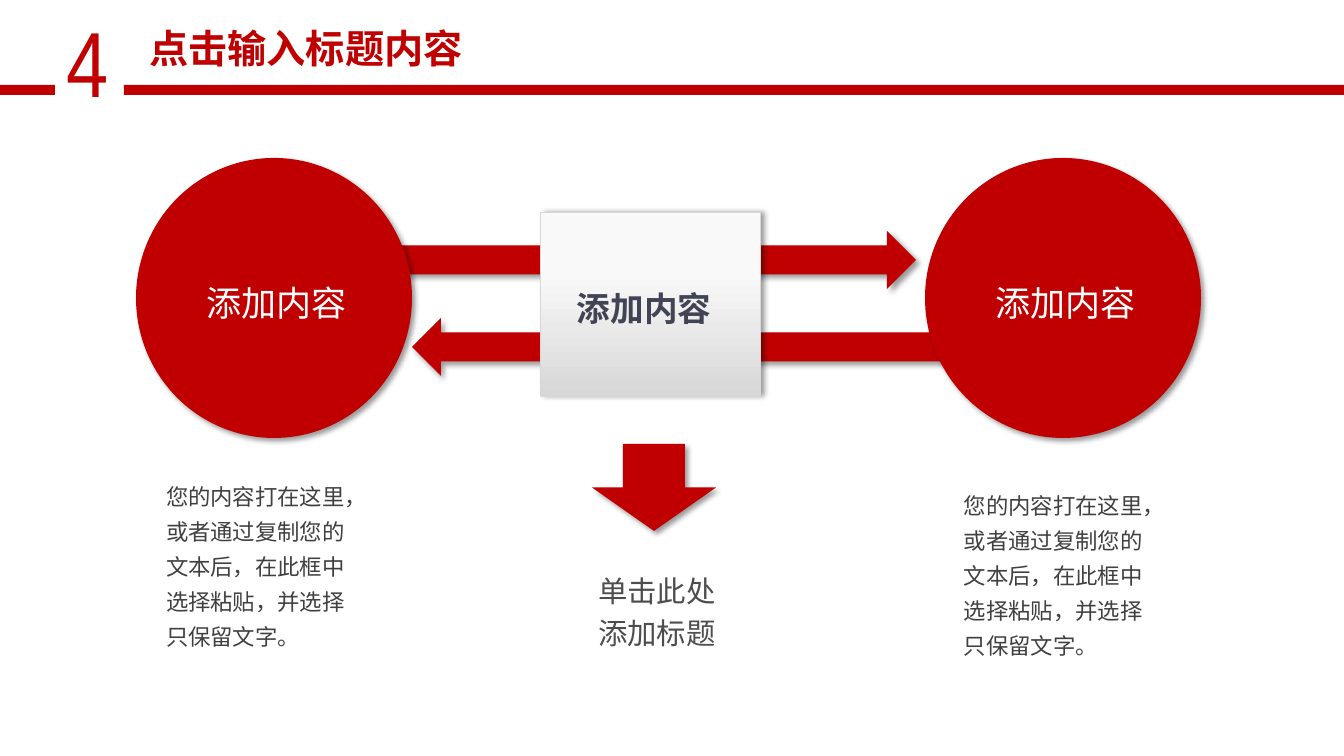
from dataclasses import dataclass

from lxml import etree
from pptx import Presentation
from pptx import util as u
from pptx.dml.color import RGBColor
from pptx.enum import shapes, text
from pptx.oxml.ns import qn

EMU_PER_PX = 914400 / 100.8


@dataclass(frozen=True)
class Theme:
    red: str = "C00000"
    white: str = "FFFFFF"
    slate: str = "414455"
    body_gray: str = "404040"
    caption_gray: str = "4D4D4D"
    panel_top: str = "F9F9F9"
    panel_bottom: str = "D7D7D7"
    shadow: str = "000000"
    cjk: str = "Noto Sans CJK SC"
    narrow: str = "Arial Narrow"
    number_size: int = 66
    title_size: int = 28
    circle_size: int = 25
    panel_size: int = 24
    caption_size: int = 21
    body_size: int = 16


def px(length):
    return u.Emu(round(length * EMU_PER_PX))


class SlideBuilder:
    def __init__(self, slide, theme):
        self.slide = slide
        self.theme = theme

    def set_text(self, frame, words, size, color, font=None, bold=False,
                 spacing=None, align=text.PP_ALIGN.LEFT, insets=(10, 5, 10, 5)):
        frame.word_wrap = True
        (frame.margin_left, frame.margin_top,
         frame.margin_right, frame.margin_bottom) = map(px, insets)
        para = frame.paragraphs[0]
        para.text = words
        para.alignment = align
        if spacing:
            para.line_spacing = spacing
        name = font or self.theme.cjk
        para.font.name = name
        para.font.size = u.Pt(size)
        para.font.bold = bold
        para.font.color.rgb = RGBColor.from_string(color)
        properties = para._p.get_or_add_pPr().get_or_add_defRPr()
        etree.SubElement(properties, qn("a:ea"), typeface=name)

    def text_box(self, place, words, size, color, **style):
        box = self.slide.shapes.add_textbox(*map(px, place))
        box.text_frame.auto_size = text.MSO_AUTO_SIZE.SHAPE_TO_FIT_TEXT
        self.set_text(box.text_frame, words, size, color, **style)

    def shape(self, kind, place, shadow_angle=None):
        shape = self.slide.shapes.add_shape(kind, *map(px, place))
        shape.shadow.inherit = False
        shape.fill.solid()
        shape.fill.fore_color.rgb = RGBColor.from_string(self.theme.red)
        shape.line.fill.background()
        if shadow_angle is not None:
            self.cast_shadow(shape, shadow_angle)
        return shape

    def cast_shadow(self, shape, angle):
        effects = shape._element.spPr.find(qn("a:effectLst"))
        shadow = etree.SubElement(
            effects, qn("a:outerShdw"), blurRad=str(u.Pt(4)), dist=str(u.Pt(3)),
            dir=str(angle * 60000), algn="tl", rotWithShape="0")
        color = etree.SubElement(shadow, qn("a:srgbClr"), val=self.theme.shadow)
        etree.SubElement(color, qn("a:alpha"), val="40000")

    def label(self, shape, words, size, color, indent, bold=False):
        shape.text_frame.vertical_anchor = text.MSO_ANCHOR.MIDDLE
        self.set_text(shape.text_frame, words, size, color, bold=bold,
                      spacing=1.2, insets=(indent, 7, 14, 7))

    def circle(self, place, words):
        circle = self.shape(shapes.MSO_SHAPE.OVAL, place, 45)
        self.label(circle, words, self.theme.circle_size, self.theme.white, 30)

    def panel(self, place, words):
        theme = self.theme
        panel = self.shape(shapes.MSO_SHAPE.RECTANGLE, place, 0)
        panel.fill.gradient()
        panel.fill.gradient_angle = 270
        stops = ((0.33, theme.panel_top), (1, theme.panel_bottom))
        for stop, (position, color) in zip(panel.fill.gradient_stops, stops):
            stop.position = position
            stop.color.rgb = RGBColor.from_string(color)
        panel.line.color.rgb = RGBColor.from_string(theme.panel_bottom)
        panel.line.width = u.Pt(0.25)
        self.label(panel, words, theme.panel_size, theme.slate, 37, bold=True)


def main():
    deck = Presentation()
    deck.slide_width, deck.slide_height = px(1344), px(756)
    theme = Theme()
    page = SlideBuilder(deck.slides.add_slide(deck.slide_layouts[6]), theme)
    preset = shapes.MSO_SHAPE

    page.text_box((57, 0, 34, 122), "4", theme.number_size, theme.red,
                  font=theme.narrow)
    for left, width in ((0, 55), (124, 1220)):
        page.shape(preset.RECTANGLE, (left, 85, width, 10))
    page.text_box((125, 19, 362, 57), "点击输入标题内容", theme.title_size,
                  theme.red, bold=True, align=text.PP_ALIGN.CENTER)

    page.shape(preset.RIGHT_ARROW, (393, 231, 523, 58), 45)
    page.shape(preset.LEFT_ARROW, (412, 318, 541, 58), 45)
    for left in (136, 925):
        page.circle((left, 158, 276, 280), "添加内容")
    page.panel((540, 212, 220, 184), "添加内容")
    page.shape(preset.DOWN_ARROW, (592, 444, 124, 87), 45)

    body = "您的内容打在这里，或者通过复制您的文本后，在此框中选择粘贴，并选择只保留文字。"
    insets = (14, 7, 14, 7)
    for left, top in ((152, 468), (950, 477)):
        page.text_box((left, top, 228, 195), body, theme.body_size,
                      theme.body_gray, spacing=1.3, insets=insets)
    page.text_box((584, 559, 173, 100), "单击此处添加标题", theme.caption_size,
                  theme.caption_gray, spacing=1.2, insets=insets)

    deck.save("out.pptx")


if __name__ == "__main__":
    main()
